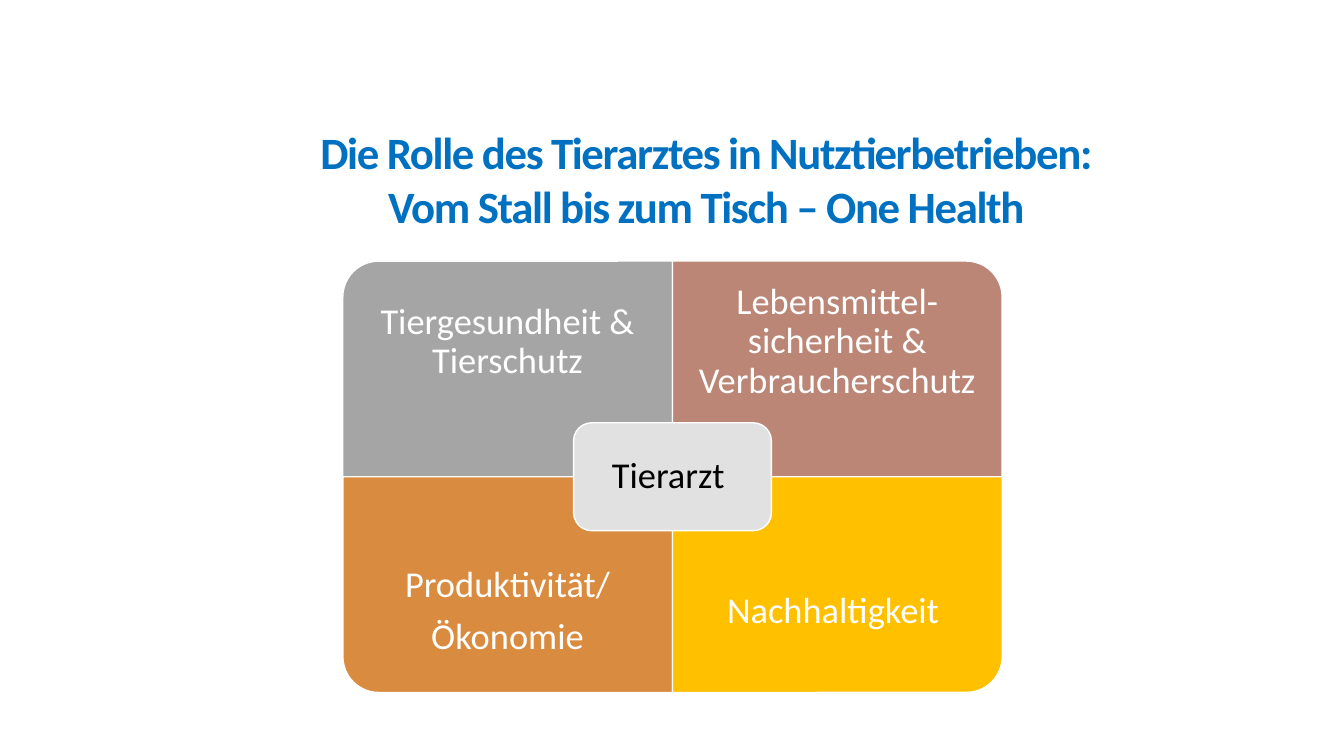
from pptx import Presentation
from pptx.dml.color import RGBColor
from pptx.enum.shapes import MSO_SHAPE
from pptx.enum.text import MSO_ANCHOR, PP_ALIGN
from pptx.util import Inches, Pt

WIDE, HIGH = 13.33, 7.5
FONT = "Calibri"
WHITE = "FFFFFF"

# Label, fill and turn of each quarter, row by row
PARTS = [
    ("Tiergesundheit & Tierschutz", "A5A5A5", 270),
    ("Lebensmittel-sicherheit & Verbraucherschutz", "BB8676", 0),
    ("Produktivität/\nÖkonomie", "D98B3F", 180),
    ("Nachhaltigkeit ", "FFC000", 90),
]


def color(code):
    return RGBColor.from_string(code)


def add_text(slide, box, text, size, tone, inset=0.1, bold=False):
    label = slide.shapes.add_textbox(*map(Inches, box))
    frame = label.text_frame
    frame.word_wrap = True
    frame.margin_left = frame.margin_right = Inches(inset)
    frame.text = text
    for para in frame.paragraphs:
        para.alignment = PP_ALIGN.CENTER
        for run in para.runs:
            font = run.font
            font.name, font.size, font.bold = FONT, Pt(size), bold
            font.color.rgb = color(tone)
    return frame


def add_label(slide, box, text, tone, inset):
    frame = add_text(slide, box, text, 26, tone, inset)
    frame.margin_top = frame.margin_bottom = Inches(inset)
    frame.vertical_anchor = MSO_ANCHOR.MIDDLE
    for para in frame.paragraphs:
        para.line_spacing = 0.9
        para.space_after = Pt(9)


def add_panel(slide, kind, box, fill, turn=0):
    left, top, width, height = box
    if turn % 180:  # a quarter turn swaps the sides around the centre
        shift = (width - height) / 2
        left, top = left + shift, top - shift
        width, height = height, width
    panel = slide.shapes.add_shape(kind, *map(Inches, (left, top, width, height)))
    panel.rotation = turn
    panel.shadow.inherit = False
    panel.fill.solid()
    panel.fill.fore_color.rgb = color(fill)
    panel.line.color.rgb = color(WHITE)
    panel.line.width = Pt(1)


def add_title(slide, box):
    text = ("Die Rolle des Tierarztes in Nutztierbetrieben:\n"
            "Vom Stall bis zum Tisch – One Health")
    frame = add_text(slide, box, text, 32, "0070C0", bold=True)
    for para in frame.paragraphs:
        for run in para.runs:
            run.font._element.set("spc", "-100")


def add_matrix(slide, box):
    left, top, width, height = box
    wide, high = width / 2, height / 2

    # Four quarters, with labels kept clear of the centre
    for i, (text, fill, turn) in enumerate(PARTS):
        row, col = divmod(i, 2)
        x, y = left + col * wide, top + row * high
        add_panel(slide, MSO_SHAPE.ROUND_1_RECTANGLE, (x, y, wide, high), fill, turn)
        add_label(slide, (x, y + row * high / 4, wide, high * 0.75), text, WHITE, 0.2)

    # Centre
    mid = (left + wide * 0.7, top + high * 0.75, wide * 0.6, high / 2)
    add_panel(slide, MSO_SHAPE.ROUNDED_RECTANGLE, mid, "E1E1E1")
    add_label(slide, mid, "Tierarzt ", "000000", 0.16)


def main():
    deck = Presentation()
    deck.slide_width, deck.slide_height = Inches(WIDE), Inches(HIGH)
    slide = deck.slides.add_slide(deck.slide_layouts[6])
    add_matrix(slide, (3.4, 2.59, 6.54, 4.28))
    add_title(slide, (2.24, 1.19, 9.53, 1.72))
    deck.save("out.pptx")


if __name__ == "__main__":
    main()
